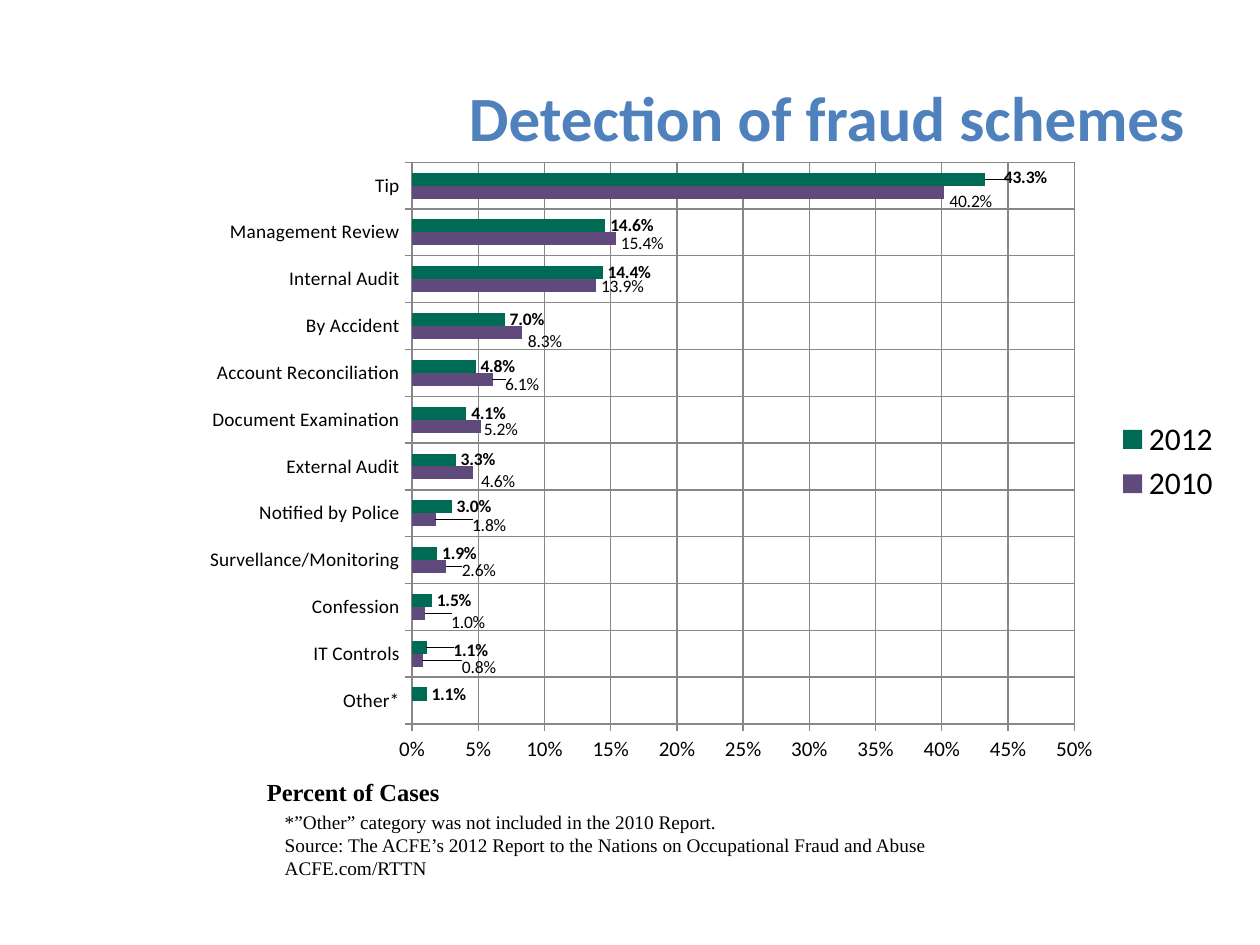
from dataclasses import dataclass

from lxml.etree import SubElement
from pptx import Presentation
from pptx.chart.data import CategoryChartData
from pptx.dml.color import RGBColor
from pptx.enum.chart import XL_CHART_TYPE, XL_LABEL_POSITION, XL_LEGEND_POSITION, XL_TICK_MARK
from pptx.enum.text import MSO_ANCHOR, MSO_AUTO_SIZE, PP_ALIGN
from pptx.oxml import parse_xml
from pptx.oxml.ns import qn
from pptx.util import Cm, Pt

CHART_NS = "http://schemas.openxmlformats.org/drawingml/2006/chart"
LEADER_LINES = (
    f'<c:extLst xmlns:c="{CHART_NS}"><c:ext uri="{{CE6537A1-D6FC-4f65-9D91-7224C49458BB}}" '
    'xmlns:c15="http://schemas.microsoft.com/office/drawing/2012/chart">'
    '<c15:showLeaderLines val="1"/></c:ext></c:extLst>'
)

# Method, share in 2010, share in 2012 (bottom to top)
DETECTION = [
    ("Other*", None, 0.011),
    ("IT Controls", 0.008, 0.011),
    ("Confession", 0.01, 0.015),
    ("Survellance/Monitoring", 0.026, 0.019),
    ("Notified by Police", 0.018, 0.03),
    ("External Audit", 0.046, 0.033),
    ("Document Examination", 0.052, 0.041),
    ("Account Reconciliation", 0.061, 0.048),
    ("By Accident", 0.083, 0.07),
    ("Internal Audit", 0.139, 0.144),
    ("Management Review", 0.154, 0.146),
    ("Tip", 0.402, 0.433),
]

# Label shifts by point, in percent of the chart's width and height
LABEL_SHIFTS = {
    "2010": {1: (3.3, 1.2), 2: (2, 1.4), 3: (1, 0.7), 4: (3, 0.9), 5: (0.3, 1.3), 6: (-0.2, 0.6),
             7: (0.7, 0.8), 8: (0.1, 1.4), 9: (0, 0.2), 10: (0, 0.8), 11: (0, 1.5)},
    "2012": {1: (2.1, 0.5), 11: (1.3, -0.2)},
}


@dataclass(frozen=True)
class Theme:
    heading_font: str = "Calibri"
    note_font: str = "Times New Roman"
    title: RGBColor = RGBColor(0x4F, 0x81, 0xBD)
    text: RGBColor = RGBColor(0, 0, 0)
    grid: RGBColor = RGBColor(0x87, 0x87, 0x87)
    year_2010: RGBColor = RGBColor(0x60, 0x4A, 0x7B)
    year_2012: RGBColor = RGBColor(0x00, 0x6B, 0x54)
    title_size: int = 36
    legend_size: int = 18
    caption_size: int = 14
    value_size: int = 12
    category_size: int = 11
    note_size: int = 11
    label_size: int = 10


def add_layout(parent, index, **settings):
    """Insert a manual chart layout as the child of parent at index."""
    layout = parent.makeelement(qn("c:layout"))
    manual = SubElement(layout, qn("c:manualLayout"))
    for name, value in settings.items():
        SubElement(manual, qn(f"c:{name}")).set("val", str(value))
    parent.insert(index, layout)


class SlideBuilder:
    def __init__(self, page, theme):
        self.page = page
        self.theme = theme

    def style(self, font, size, bold=False, name=None, color=None):
        font.name = name or self.theme.heading_font
        font.size = Pt(size)
        font.bold = bold
        font.color.rgb = color or self.theme.text

    def title(self, text, left, top, width, height):
        box = self.page.shapes.title
        box.left, box.top, box.width, box.height = map(Cm, (left, top, width, height))
        frame = box.text_frame
        frame.text = text
        frame.vertical_anchor = MSO_ANCHOR.MIDDLE
        para = frame.paragraphs[0]
        para.alignment = PP_ALIGN.RIGHT
        self.style(para.runs[0].font, self.theme.title_size, True, color=self.theme.title)

    def text(self, text, left, top, width, height, size, bold=False):
        box = self.page.shapes.add_textbox(*map(Cm, (left, top, width, height)))
        frame = box.text_frame
        frame.word_wrap = True
        frame.auto_size = MSO_AUTO_SIZE.SHAPE_TO_FIT_TEXT
        frame.text = text
        for para in frame.paragraphs:
            for span in para.runs:
                self.style(span.font, size, bold, self.theme.note_font)

    def axis(self, axis, size):
        axis.has_major_gridlines = True
        axis.major_tick_mark = XL_TICK_MARK.OUTSIDE
        axis.minor_tick_mark = XL_TICK_MARK.NONE
        for line in (axis.format.line, axis.major_gridlines.format.line):
            line.color.rgb = self.theme.grid
            line.width = Pt(0.75)
        self.style(axis.tick_labels.font, size)

    def series(self, series, color, bold):
        series.format.fill.solid()
        series.format.fill.fore_color.rgb = color
        series.invert_if_negative = False
        labels = series.data_labels
        labels.show_value = True
        labels.number_format = "0.0%"
        labels.number_format_is_linked = False
        labels.position = XL_LABEL_POSITION.OUTSIDE_END
        self.style(labels.font, self.theme.label_size, bold)
        for index in LABEL_SHIFTS[series.name]:
            label = series.points[index].data_label
            self.style(label.font, self.theme.label_size, bold)
            label.position = XL_LABEL_POSITION.OUTSIDE_END

    def bar_chart(self, left, top, width, height):
        theme = self.theme
        methods, shares_2010, shares_2012 = zip(*DETECTION)
        data = CategoryChartData(number_format="0.0%")
        data.categories = methods
        data.add_series("2010", shares_2010)
        data.add_series("2012", shares_2012)
        chart = self.page.shapes.add_chart(
            XL_CHART_TYPE.BAR_CLUSTERED, *map(Cm, (left, top, width, height)), data).chart
        self.style(chart.font, theme.legend_size)
        chart.has_title = False
        chart.has_legend = True
        chart.legend.position = XL_LEGEND_POSITION.RIGHT
        chart.legend.include_in_layout = False
        self.style(chart.legend.font, theme.legend_size)

        self.axis(chart.category_axis, theme.category_size)
        values = chart.value_axis
        self.axis(values, theme.value_size)
        values.minimum_scale, values.maximum_scale, values.major_unit = 0, 0.5, 0.05
        values.tick_labels.number_format = "0%"
        values.tick_labels.number_format_is_linked = False

        plot = chart.plots[0]
        plot.gap_width = 160
        plot.overlap = 0
        plot.vary_by_categories = False
        self.series(plot.series[0], theme.year_2010, False)
        self.series(plot.series[1], theme.year_2012, True)
        self.place_chart_parts(chart)

    def place_chart_parts(self, chart):
        """Fix the plot area, shift single labels and show leader lines for 2012."""
        area = next(chart.element.iter(qn("c:plotArea")))
        for old in area.findall(qn("c:layout")):
            area.remove(old)
        add_layout(area, 0, layoutTarget="inner", xMode="edge", yMode="edge",
                   x=0.2135, y=0.02, w=0.634, h=0.901)
        groups = list(area.iter(qn("c:dLbls")))
        for group, shifts in zip(groups, LABEL_SHIFTS.values()):
            for label in group.findall(qn("c:dLbl")):
                across, down = shifts[int(label.find(qn("c:idx")).get("val"))]
                add_layout(label, 1, x=across / 100, y=down / 100)
        groups[1].append(parse_xml(LEADER_LINES))


def main():
    deck = Presentation()
    deck.slide_width, deck.slide_height = Cm(25.4), Cm(19.05)
    theme = Theme()
    builder = SlideBuilder(deck.slides.add_slide(deck.slide_layouts[5]), theme)
    builder.title("Detection of fraud schemes", 4.45, 0.76, 19.69, 3.18)
    builder.bar_chart(3.81, 3.02, 21.06, 12.57)
    builder.text(
        "*”Other” category was not included in the 2010 Report.\n"
        "Source: The ACFE’s 2012 Report to the Nations on Occupational Fraud and Abuse\n"
        "ACFE.com/RTTN",
        5.49, 16.21, 16.05, 1.68, theme.note_size)
    builder.text("Percent of Cases", 5.13, 15.54, 5.54, 0.86, theme.caption_size, True)
    deck.save("out.pptx")


if __name__ == "__main__":
    main()
